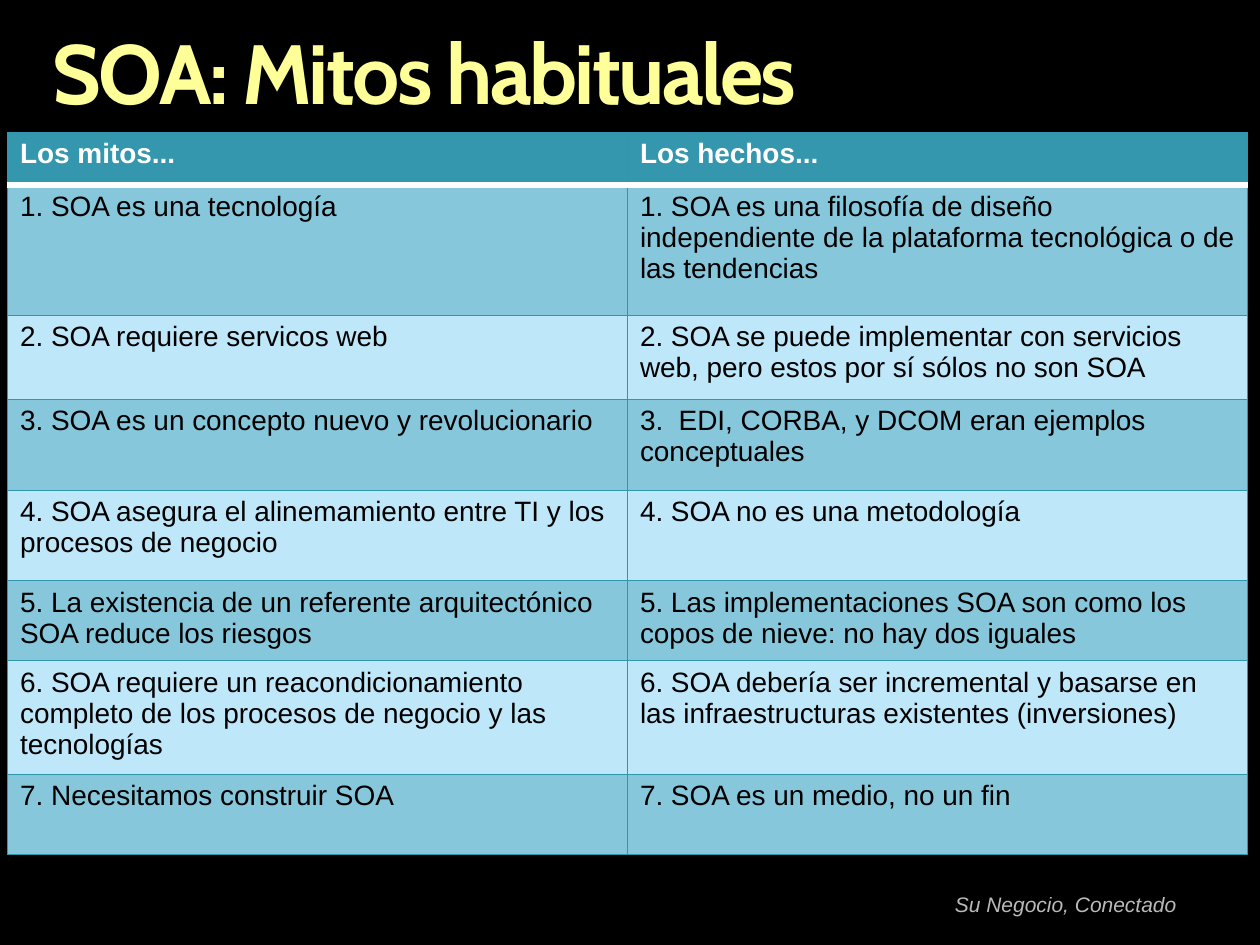
"""Builds the slide on common SOA myths and the facts behind them."""
import pptx
import pptx.dml.color
import pptx.enum.text
import pptx.oxml
import pptx.oxml.ns
import pptx.util
from dataclasses import dataclass

Inches = pptx.util.Inches
Pt = pptx.util.Pt


@dataclass(frozen=True)
class Theme:
    """Colours, fonts and sizes of the slide."""
    background: str = "000000"
    title: str = "FFFF99"
    header: str = "3497AE"
    bands: tuple = ("87C7DC", "BEE7FA")
    grid: str = "3096AD"
    light: str = "FFFFFF"
    dark: str = "000000"
    title_font: str = "Cabin"
    body_font: str = "Arial"
    title_size: float = 48
    table_size: float = 16
    footer_size: float = 12
    grid_width: float = 0.5
    rule_width: float = 3.78


THEME = Theme()

ROWS = [
    ("Los mitos...", "Los hechos...", 0.42),
    ("1. SOA es una tecnología",
     "1. SOA es una filosofía de diseño independiente de la plataforma tecnológica o de las tendencias", 1.03),
    ("2. SOA requiere servicos web",
     "2. SOA se puede implementar con servicios web, pero estos por sí sólos no son SOA", 0.67),
    ("3. SOA es un concepto nuevo y revolucionario",
     "3.  EDI, CORBA, y DCOM eran ejemplos conceptuales", 0.72),
    ("4. SOA asegura el alinemamiento entre TI y los procesos de negocio",
     "4. SOA no es una metodología", 0.72),
    ("5. La existencia de un referente arquitectónico SOA reduce los riesgos",
     "5. Las implementaciones SOA son como los copos de nieve: no hay dos iguales", 0.61),
    ("6. SOA requiere un reacondicionamiento completo de los procesos de negocio y las tecnologías",
     "6. SOA debería ser incremental y basarse en las infraestructuras existentes (inversiones)", 0.87),
    ("7. Necesitamos construir SOA", "7. SOA es un medio, no un fin", 0.64),
]


def rgb(value):
    """Return a colour object for a hex string."""
    return pptx.dml.color.RGBColor.from_string(value)


def style_run(r, font, size, color, bold=False, italic=False):
    """Set the font of a run."""
    r.font.name = font
    r.font.size = Pt(size)
    r.font.bold = bold
    r.font.italic = italic
    r.font.color.rgb = rgb(color)


def add_text(s, text, left, top, width, height):
    """Add a wrapping text box and return its frame."""
    tf = s.shapes.add_textbox(Inches(left), Inches(top), Inches(width), Inches(height)).text_frame
    tf.word_wrap = True
    tf.text = text
    return tf


def add_title(s):
    """Add the slide title with tight letter spacing."""
    tf = add_text(s, "SOA: Mitos habituales", 0.42, 0.25, 9.17, 1.45)
    tf.margin_left = tf.margin_right = tf.margin_top = tf.margin_bottom = 0
    tf.vertical_anchor = pptx.enum.text.MSO_ANCHOR.TOP
    p = tf.paragraphs[0]
    p.line_spacing = 0.9
    r = p.runs[0]
    style_run(r, THEME.title_font, THEME.title_size, THEME.title, bold=True)
    r.font._element.set("spc", "-150")


def add_footer(s):
    """Add the translucent tagline at the lower right."""
    tf = add_text(s, "Su Negocio, Conectado", 7.48, 7.03, 2.22, 0.3)
    r = tf.paragraphs[0].runs[0]
    style_run(r, THEME.body_font, THEME.footer_size, THEME.light, italic=True)
    color = r.font._element.find(".//" + pptx.oxml.ns.qn("a:srgbClr"))
    color.append(pptx.oxml.parse_xml(f'<a:alpha {pptx.oxml.ns.nsdecls("a")} val="72000"/>'))


def set_borders(cell, **rules):
    """Draw the four cell borders, with the sides named in rules as white rules."""
    tcPr = cell._tc.get_or_add_tcPr()
    for i, side in enumerate("LRTB"):
        color, width = (THEME.light, THEME.rule_width) if rules.get(side) else (THEME.grid, THEME.grid_width)
        tcPr.insert(i, pptx.oxml.parse_xml(
            f'<a:ln{side} {pptx.oxml.ns.nsdecls("a")} w="{int(Pt(width))}">'
            f'<a:solidFill><a:srgbClr val="{color}"/></a:solidFill></a:ln{side}>'))


def fill_cell(cell, text, row):
    """Write and style one table cell according to its row."""
    is_header = row == 0
    cell.text = text
    style_run(cell.text_frame.paragraphs[0].runs[0], THEME.body_font, THEME.table_size,
              THEME.light if is_header else THEME.dark, bold=is_header)
    cell.fill.solid()
    cell.fill.fore_color.rgb = rgb(THEME.header if is_header else THEME.bands[(row - 1) % 2])
    set_borders(cell, B=is_header, T=row == 1)


def add_myth_table(s):
    """Add the table of myths and facts."""
    height = sum(row[-1] for row in ROWS)
    table = s.shapes.add_table(len(ROWS), 2, Inches(0.06), Inches(1.05), Inches(9.84), Inches(height)).table
    for i, (myth, fact, row_height) in enumerate(ROWS):
        table.rows[i].height = Inches(row_height)
        for j, text in enumerate((myth, fact)):
            fill_cell(table.cell(i, j), text, i)


def main():
    """Build and save the slide."""
    prs = pptx.Presentation()
    prs.slide_width, prs.slide_height = Inches(10), Inches(7.5)
    s = prs.slides.add_slide(prs.slide_layouts[6])
    s.background.fill.solid()
    s.background.fill.fore_color.rgb = rgb(THEME.background)
    add_footer(s)
    add_title(s)
    add_myth_table(s)
    prs.save("out.pptx")


if __name__ == "__main__":
    main()
